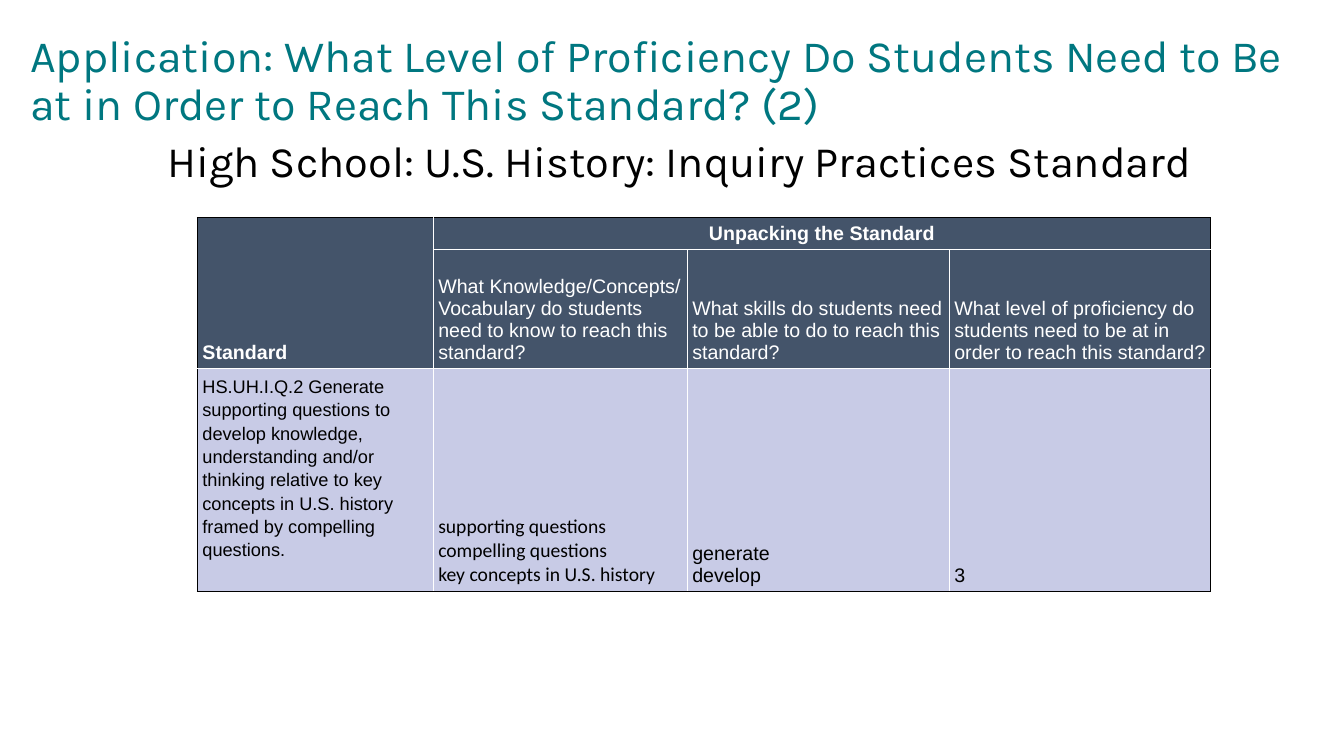
from lxml import etree
from pptx import Presentation
from pptx.dml.color import RGBColor
from pptx.enum import text
from pptx.oxml import ns
from pptx.util import Pt

TEAL = RGBColor(0x00, 0x77, 0x80)
SLATE = RGBColor(0x44, 0x54, 0x6A)
LAVENDER = RGBColor(0xC8, 0xCB, 0xE6)
BLACK = RGBColor(0x00, 0x00, 0x00)
WHITE = RGBColor(0xFF, 0xFF, 0xFF)

COLUMN_WIDTHS = (168.48, 181.44, 187.2, 186.48)
ROW_HEIGHTS = (22.8, 85, 159)
HEADER_ROWS = 2
ROWS = (
    ("Standard", "Unpacking the Standard", "", ""),
    (
        "",
        "What Knowledge/Concepts/ Vocabulary do students need to know to reach this standard?",
        "What skills do students need to be able to do to reach this standard?",
        "What level of proficiency do students need to be at in order to reach this standard?",
    ),
    (
        "HS.UH.I.Q.2 Generate supporting questions to develop knowledge, understanding "
        "and/or thinking relative to key concepts in U.S. history framed by compelling questions.",
        "supporting questions\ncompelling questions\nkey concepts in U.S. history",
        "generate\ndevelop",
        "3",
    ),
)


def set_font(paragraph, face, size, color, bold=False):
    """Format all the text of a paragraph."""
    font = paragraph.font
    font.name, font.size, font.bold = face, Pt(size), bold
    font.color.rgb = color


def write_heading(box, wording, bounds, size, color):
    """Place a heading box and fill it with one Karla paragraph."""
    box.left, box.top, box.width, box.height = map(Pt, bounds)
    frame = box.text_frame
    frame.word_wrap = True
    frame.auto_size = text.MSO_AUTO_SIZE.NONE
    frame.vertical_anchor = text.MSO_ANCHOR.TOP
    frame.margin_left = frame.margin_right = Pt(7.2)
    frame.margin_top = frame.margin_bottom = Pt(3.6)
    frame.text = wording
    heading = frame.paragraphs[0]
    heading.alignment = text.PP_ALIGN.LEFT
    heading.line_spacing = 0.9
    heading.space_before = Pt(0)
    set_font(heading, "Karla", size, color)


def set_borders(cell, row, column):
    """Rule a cell in white, and in black along the outer edge of the table."""
    outer = {
        "lnL": column == 0,
        "lnR": column + cell.span_width == len(COLUMN_WIDTHS),
        "lnT": row == 0,
        "lnB": row + cell.span_height == len(ROW_HEIGHTS),
    }
    properties = cell._tc.get_or_add_tcPr()
    for side, is_outer in outer.items():
        line = etree.SubElement(properties, ns.qn(f"a:{side}"), w=str(Pt(1)))
        fill = etree.SubElement(line, ns.qn("a:solidFill"))
        etree.SubElement(fill, ns.qn("a:srgbClr"), val=str(BLACK if is_outer else WHITE))


def fill_cell(cell, wording, row, column):
    """Write and format one cell by its place in the table."""
    is_header = row < HEADER_ROWS
    is_standard = not is_header and column == 0
    set_borders(cell, row, column)
    cell.fill.solid()
    cell.fill.fore_color.rgb = SLATE if is_header else LAVENDER
    cell.margin_left = cell.margin_right = Pt(3.5)
    cell.margin_top = cell.margin_bottom = Pt(3.6)
    cell.vertical_anchor = text.MSO_ANCHOR.TOP if is_standard else text.MSO_ANCHOR.BOTTOM
    cell.text = wording
    for paragraph in cell.text_frame.paragraphs:
        face = "Calibri" if not is_header and column == 1 else "Arial"
        set_font(paragraph, face, 13 if is_standard else 14,
                 WHITE if is_header else BLACK, bold=row == 0)
        if is_standard:
            paragraph.line_spacing = 1.15


def add_standard_table(slide):
    """Add the table that unpacks the standard."""
    table = slide.shapes.add_table(
        len(ROW_HEIGHTS), len(COLUMN_WIDTHS), Pt(141.1), Pt(155.5),
        Pt(sum(COLUMN_WIDTHS)), Pt(sum(ROW_HEIGHTS))).table
    table.horz_banding = False
    for column, width in zip(table.columns, COLUMN_WIDTHS):
        column.width = Pt(width)
    for row, height in zip(table.rows, ROW_HEIGHTS):
        row.height = Pt(height)
    table.cell(0, 0).merge(table.cell(1, 0))
    unpacking = table.cell(0, 1)
    unpacking.merge(table.cell(0, 3))
    for row, wordings in enumerate(ROWS):
        for column, wording in enumerate(wordings):
            cell = table.cell(row, column)
            if not cell.is_spanned:
                fill_cell(cell, wording, row, column)
    unpacking.vertical_anchor = text.MSO_ANCHOR.MIDDLE
    unpacking.text_frame.paragraphs[0].alignment = text.PP_ALIGN.CENTER


def main():
    """Build the slide and save it."""
    deck = Presentation()
    deck.slide_width, deck.slide_height = Pt(960), Pt(540)
    slide = deck.slides.add_slide(deck.slide_layouts[5])
    write_heading(
        slide.shapes.title,
        "Application: What Level of Proficiency Do Students Need to Be at "
        "in Order to Reach This Standard? (2)",
        (14.4, 20.2, 928, 103.7), 32, TEAL)
    course = slide.shapes.add_textbox(0, 0, 0, 0)
    write_heading(course, "High School: U.S. History: Inquiry Practices Standard",
                  (112.3, 96.5, 765.4, 368.6), 31, BLACK)
    add_standard_table(slide)
    deck.save("out.pptx")


if __name__ == "__main__":
    main()
